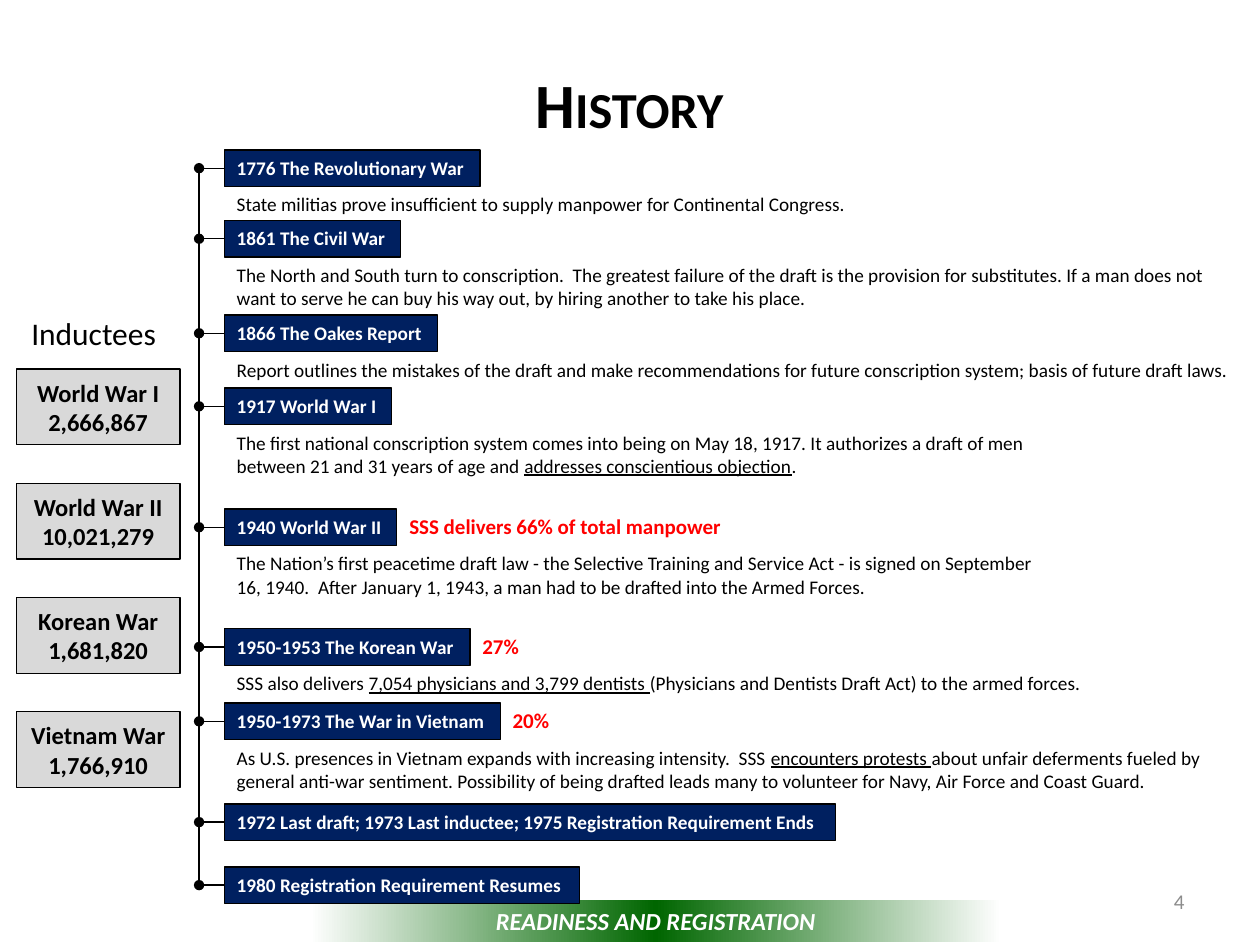
import copy
from dataclasses import dataclass

import pptx
import pptx.dml.color
import pptx.enum.dml
import pptx.enum.shapes
import pptx.enum.text
import pptx.oxml.ns
import pptx.util
from lxml import etree

Inches = pptx.util.Inches
Pt = pptx.util.Pt
Align = pptx.enum.text.PP_ALIGN
Anchor = pptx.enum.text.MSO_ANCHOR
AutoSize = pptx.enum.text.MSO_AUTO_SIZE
qn = pptx.oxml.ns.qn

BLACK, WHITE, NAVY, RED = "000000", "FFFFFF", "002060", "FF0000"
SPINE_X, HEAD_X, HEAD_H = 1.58, 1.78, 0.29


@dataclass
class Event:
    top: float
    width: float
    heading: str
    detail: str = ""
    detail_w: float = 8.08
    detail_h: float = 0.29
    detail_wrap: bool = True
    note: str = ""
    note_w: float = 0.54


@dataclass
class Inductees:
    war: str
    count: str


EVENTS = [
    Event(1.19, 2.03, "1776 The Revolutionary War",
          "State militias prove insufficient to supply manpower for Continental Congress.",
          5.08, detail_wrap=False),
    Event(1.75, 1.4, "1861 The Civil War",
          "The North and South turn to conscription.  The greatest failure of the draft is the "
          "provision for substitutes. If a man does not want to serve he can buy his way out, "
          "by hiring another to take his place.", detail_h=0.47),
    Event(2.5, 1.69, "1866 The Oakes Report",
          "Report outlines the mistakes of the draft and make recommendations for future "
          "conscription system; basis of future draft laws."),
    Event(3.08, 1.33, "1917 World War I",
          "The first national conscription system comes into being on May 18, 1917. It authorizes "
          "a draft of men between 21 and 31 years of age and _addresses conscientious objection_.",
          6.72, 0.47),
    Event(4.04, 1.37, "1940 World War II",
          "The Nation’s first peacetime draft law - the Selective Training and Service Act - is "
          "signed on September 16, 1940.  After January 1, 1943, a man had to be drafted into "
          "the Armed Forces.", 6.72, 0.47,
          note="SSS delivers 66% of total manpower", note_w=2.7),
    Event(4.99, 1.95, "1950-1953 The Korean War",
          "SSS also delivers _7,054 physicians and 3,799 dentists _(Physicians and Dentists "
          "Draft Act) to the armed forces.", 7.47, note="27%"),
    Event(5.58, 2.19, "1950-1973 The War in Vietnam",
          "As U.S. presences in Vietnam expands with increasing intensity.  SSS _encounters "
          "protests _about unfair deferments fueled by general anti-war sentiment. Possibility of "
          "being drafted leads many to volunteer for Navy, Air Force and Coast Guard.",
          8.07, 0.47, note="20%"),
    Event(6.38, 4.85, "1972 Last draft; 1973 Last inductee; 1975 Registration Requirement Ends"),
    Event(6.88, 2.82, "1980 Registration Requirement Resumes"),
]

INDUCTEES = [
    Inductees("World War I", "2,666,867"),
    Inductees("World War II", "10,021,279"),
    Inductees("Korean War", "1,681,820"),
    Inductees("Vietnam War", "1,766,910"),
]


def color(value: str) -> pptx.dml.color.RGBColor:
    return pptx.dml.color.RGBColor.from_string(value)


def set_text(sp, text: str, *, size: float, ink: str = BLACK, bold: bool = False,
             italic: bool = False, small_caps: bool = False, align=Align.LEFT,
             anchor=Anchor.TOP, wrap: bool = True, grow: bool = True) -> None:
    tf = sp.text_frame
    tf.word_wrap = wrap
    tf.auto_size = AutoSize.SHAPE_TO_FIT_TEXT if grow else AutoSize.NONE
    tf.vertical_anchor = anchor
    for i, line in enumerate(text.split("\n")):
        p = tf.add_paragraph() if i else tf.paragraphs[0]
        p.alignment = align
        for j, part in enumerate(line.split("_")):
            r = p.add_run()
            r.text = part
            r.font.name = "Calibri"
            r.font.size = Pt(size)
            r.font.bold = bold
            r.font.italic = italic
            r.font.color.rgb = color(ink)
            if j % 2:
                r.font.underline = True
            if small_caps:
                r.font._element.set("cap", "small")


def add_text(s, x: float, y: float, w: float, h: float, text: str, **fmt):
    sp = s.shapes.add_textbox(Inches(x), Inches(y), Inches(w), Inches(h))
    set_text(sp, text, **fmt)
    return sp


def add_box(s, x: float, y: float, w: float, h: float, text: str, fill: str = "", **fmt):
    sp = s.shapes.add_shape(pptx.enum.shapes.MSO_SHAPE.RECTANGLE,
                            Inches(x), Inches(y), Inches(w), Inches(h))
    sp.shadow.inherit = False
    if fill:
        sp.fill.solid()
        sp.fill.fore_color.rgb = color(fill)
        sp.line.color.rgb = color(BLACK)
        sp.line.width = Pt(0.75)
    else:
        sp.line.fill.background()
    set_text(sp, text, **fmt)
    return sp


def add_line(s, x1: float, y1: float, x2: float, y2: float, width: float,
             head: bool = False, tail: bool = False):
    line = s.shapes.add_connector(pptx.enum.shapes.MSO_CONNECTOR.STRAIGHT,
                                  Inches(x1), Inches(y1), Inches(x2), Inches(y2))
    line.line.color.rgb = color(BLACK)
    line.line.width = Pt(width)
    ln = line.line._get_or_add_ln()
    for tag, wanted in (("a:headEnd", head), ("a:tailEnd", tail)):
        if wanted:
            etree.SubElement(ln, qn(tag)).set("type", "oval")
    etree.SubElement(line._element.spPr, qn("a:effectLst"))
    return line


def add_banner(s) -> None:
    sp = add_box(s, 2.46, 7.14, 5.49, 0.34, "READINESS AND REGISTRATION", size=14,
                 ink=WHITE, bold=True, italic=True, align=Align.CENTER)
    sp.fill.gradient()
    sp.fill.gradient_angle = 0
    first = sp.fill.gradient_stops[0]._gs
    first.addnext(copy.deepcopy(first))
    for stop, position, tint in zip(sp.fill.gradient_stops, (0, 0.5, 1), (WHITE, "006600", WHITE)):
        stop.position = position
        stop.color.rgb = color(tint)


def add_event(s, event: Event, dot: bool) -> None:
    box = add_box(s, HEAD_X, event.top, event.width, HEAD_H, event.heading, NAVY,
                  size=11, ink=WHITE, bold=True, wrap=False)
    mid = event.top + HEAD_H / 2
    add_line(s, HEAD_X, mid, SPINE_X, mid, 0.75, tail=dot).begin_connect(box, 1)
    if event.detail:
        add_text(s, HEAD_X, event.top + HEAD_H, event.detail_w, event.detail_h, event.detail,
                 size=11, wrap=event.detail_wrap)
    if event.note:
        add_text(s, HEAD_X + event.width, event.top - 0.01, event.note_w, 0.3, event.note,
                 size=12, ink=RED, bold=True, wrap=False)


def main() -> None:
    prs = pptx.Presentation()
    prs.slide_width, prs.slide_height = Inches(10), Inches(7.5)
    s = prs.slides.add_slide(prs.slide_layouts[6])

    add_banner(s)
    add_text(s, 0.83, 0.42, 8.33, 0.8, "History", size=36, bold=True, small_caps=True,
             align=Align.CENTER, anchor=Anchor.MIDDLE, grow=False)

    first, last = EVENTS[0], EVENTS[-1]
    add_line(s, SPINE_X, first.top + HEAD_H / 2, SPINE_X, last.top + HEAD_H / 2, 1.5,
             head=True, tail=True)
    for event in EVENTS:
        add_event(s, event, dot=event not in (first, last))

    add_text(s, 0.15, 2.44, 1.3, 0.4, "Inductees", size=18)
    step = (5.65 - 2.93) / (len(INDUCTEES) - 1)
    for i, group in enumerate(INDUCTEES):
        add_box(s, 0.13, 2.93 + i * step, 1.3, 0.6, f"{group.war}\n{group.count}", "D9D9D9",
                size=14, bold=True, align=Align.CENTER, anchor=Anchor.MIDDLE, wrap=False)

    add_text(s, 7.17, 6.95, 2.33, 0.4, "4", size=12, ink="8C8C8C", align=Align.RIGHT,
             anchor=Anchor.MIDDLE, grow=False)
    prs.save("out.pptx")


if __name__ == "__main__":
    main()
